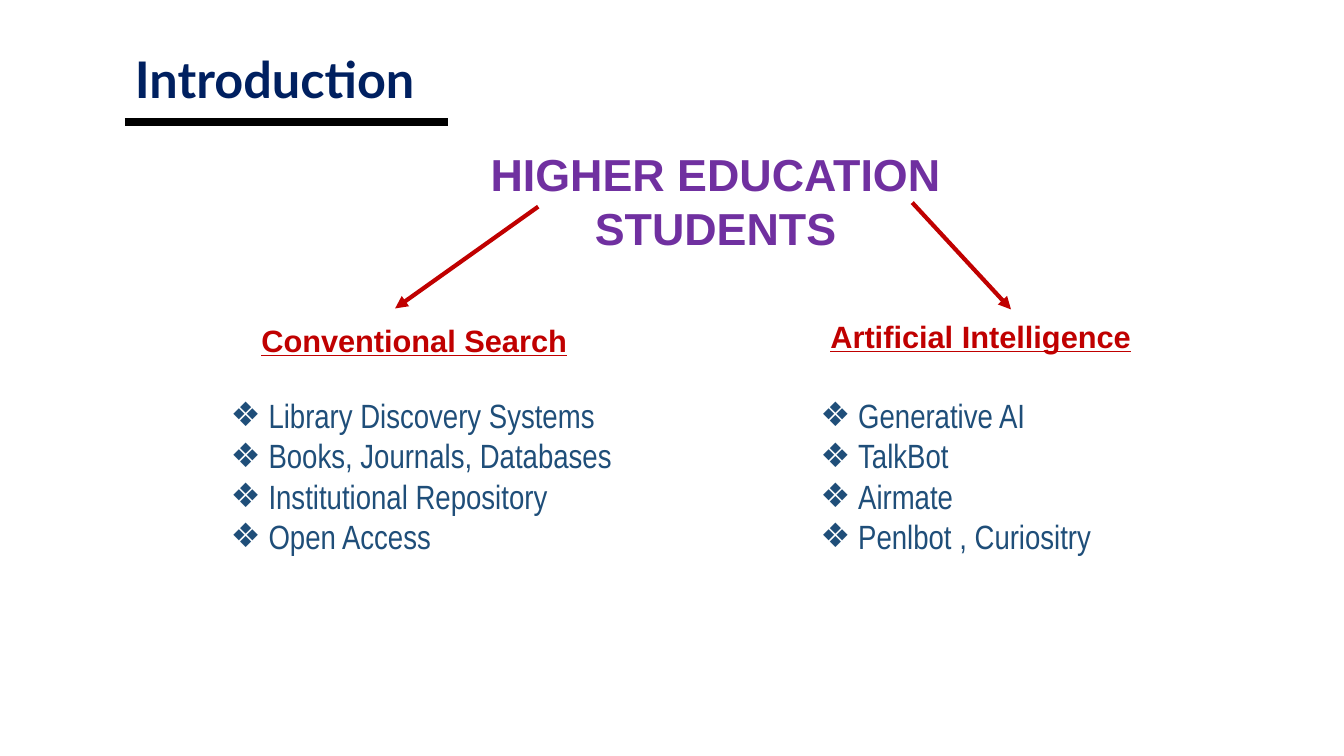
from pptx import Presentation
from pptx.dml.color import RGBColor
from pptx.enum import shapes, text
from pptx.oxml.ns import qn
from pptx.util import Pt
from lxml import etree

# Content: (text, box, size, font, colour)
TITLE = ("Introduction", (89.28, 33.12, 236.88, 51.12), 36, "Lato", "002060")
TOPIC = ("HIGHER EDUCATION STUDENTS", (334.8, 101.52, 352.8, 84.96),
         32, "Arial", "7030A0")
RED, BLUE, BLACK = "C00000", "1F4E79", "000000"

# Branches: heading, heading box, items, list box, arrow
BRANCHES = [
    ("Conventional Search", (125.28, 226.08, 341.28, 33.84),
     ["Library Discovery Systems", "Books, Journals, Databases",
      "Institutional Repository", "Open Access"],
     (157.68, 278.64, 308.88, 123.84), (384.48, 147.6, 282.24, 220.32)),
    ("Artificial Intelligence", (532.8, 223.2, 335.52, 33.84),
     ["Generative AI", "TalkBot", "Airmate", "Penlbot , Curiositry"],
     (578.88, 278.64, 216.72, 123.84), (651.6, 144.72, 722.16, 221.04)),
]
RULE = (89.28, 87.12, 319.68, 87.12)
INDENT = 27

deck = Presentation()
deck.slide_width, deck.slide_height = Pt(960), Pt(540)
slide = deck.slides.add_slide(deck.slide_layouts[6])


def hue(code):
    return RGBColor.from_string(code)


def write(lines, box, size, font, color, bold=True, under=False,
          align=text.PP_ALIGN.LEFT):
    frame = slide.shapes.add_textbox(*map(Pt, box)).text_frame
    frame.word_wrap = True
    for i, line in enumerate(lines):
        para = frame.add_paragraph() if i else frame.paragraphs[0]
        para.alignment = align
        run = para.add_run()
        run.text = line
        run.font.size, run.font.name = Pt(size), font
        run.font.bold, run.font.underline = bold, under
        run.font.color.rgb = hue(color)
    return frame


def bullet(para):
    props = para._p.get_or_add_pPr()
    props.set("marL", str(Pt(INDENT)))
    props.set("indent", str(-Pt(INDENT)))
    etree.SubElement(props, qn("a:buFont")).set("typeface", "Arial")
    etree.SubElement(props, qn("a:buChar")).set("char", "❖")


def draw(ends, color, width, arrow=False):
    line = slide.shapes.add_connector(shapes.MSO_CONNECTOR.STRAIGHT,
                                      *map(Pt, ends))
    line.line.color.rgb, line.line.width = hue(color), Pt(width)
    if arrow:
        tip = etree.SubElement(line.line._get_or_add_ln(), qn("a:tailEnd"))
        tip.set("type", "triangle")
    etree.SubElement(line._element.spPr, qn("a:effectLst"))


# Title and rule
words, *style = TITLE
title = write([words], *style)
title.vertical_anchor = text.MSO_ANCHOR.MIDDLE
title.paragraphs[0].line_spacing = 0.9
draw(RULE, BLACK, 6)

# Topic
words, *style = TOPIC
write([words], *style, align=text.PP_ALIGN.CENTER)

# Branches
for head, spot, items, box, ends in BRANCHES:
    write([head], spot, 22, "Arial", RED, under=True,
          align=text.PP_ALIGN.CENTER)
    draw(ends, RED, 3, arrow=True)
    listing = write(items, box, 24, "Arial Narrow", BLUE, bold=False)
    for para in listing.paragraphs:
        bullet(para)

deck.save("out.pptx")
